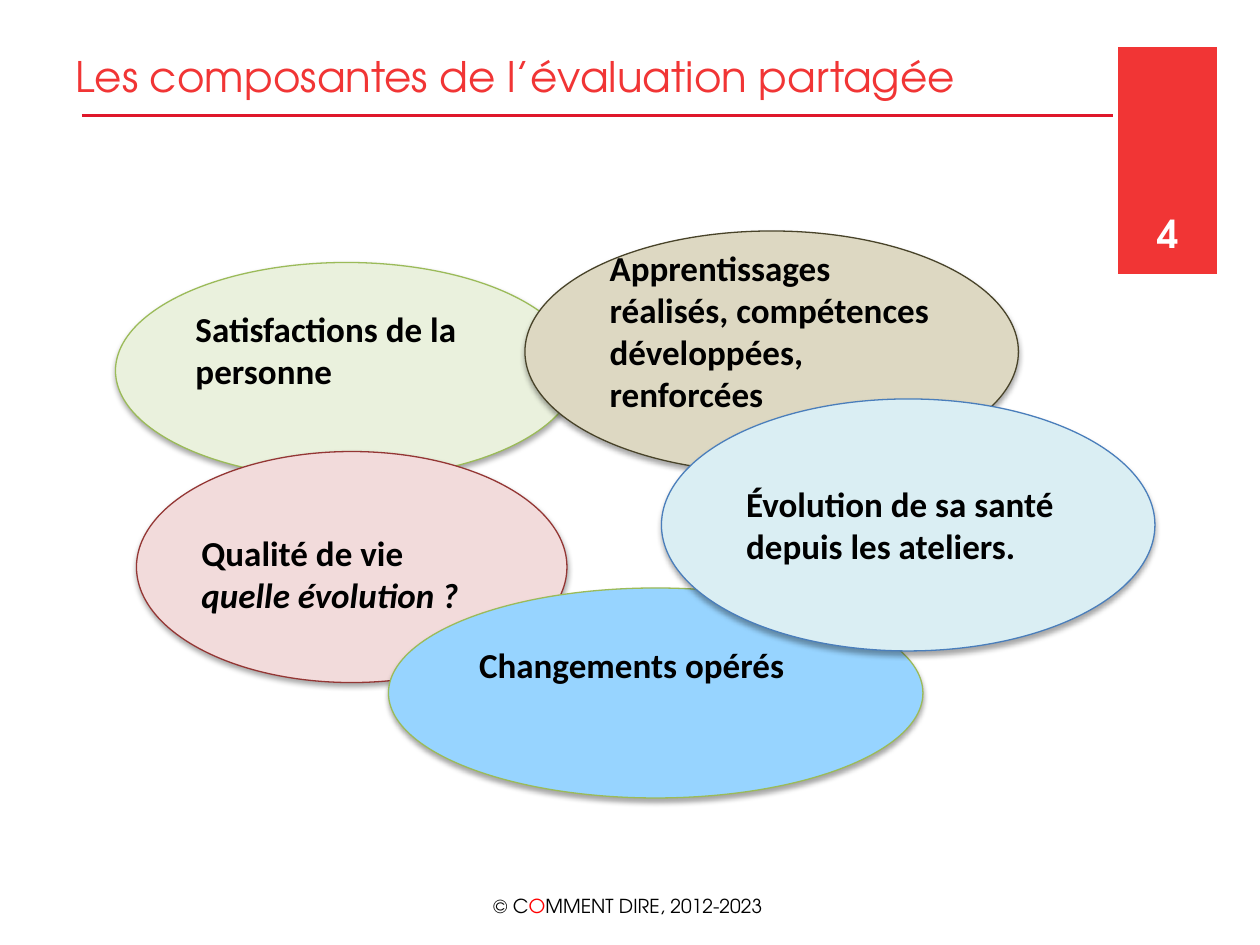
"""Build the slide on the components of a shared evaluation."""
from dataclasses import dataclass

from lxml import etree
from pptx import Presentation
from pptx import util as u
from pptx.dml.color import RGBColor
from pptx.enum import shapes, text
from pptx.oxml import ns

COLUMNS, ROWS = 120, 90
CELL = u.Inches(10) // COLUMNS


@dataclass(frozen=True)
class Theme:
    heading: str = "TeX Gyre Adventor"
    body: str = "Calibri"
    title_size: float = 24
    number_size: float = 22
    body_size: float = 20
    footer_size: float = 11
    accent: str = "F13535"
    rule: str = "DF172A"
    highlight: str = "FF0000"
    ink: str = "000000"
    paper: str = "FFFFFF"


THEME = Theme()


@dataclass(frozen=True)
class Area:
    column: float
    row: float
    columns: float
    rows: float

    def lengths(self) -> list[int]:
        return [grid(value) for value in (self.column, self.row, self.columns, self.rows)]


@dataclass(frozen=True)
class Style:
    font: str = THEME.body
    size: float = THEME.body_size
    bold: bool = True
    align: text.PP_ALIGN = text.PP_ALIGN.LEFT
    anchor: text.MSO_ANCHOR = text.MSO_ANCHOR.MIDDLE


@dataclass(frozen=True)
class Span:
    words: str
    color: str = THEME.ink
    italic: bool = False
    new_line: bool = False


@dataclass(frozen=True)
class Bubble:
    area: Area
    fill: str
    line: str
    spans: tuple[Span, ...] = ()
    lift: float = 0


BUBBLES = (
    Bubble(Area(11, 25, 44, 20.6), "EAF1DD", "9BBB59",
           (Span("Satisfactions de la personne"),), 4),
    Bubble(Area(50, 22, 47, 23), "DDD8C2", "484329",
           (Span("Apprentissages réalisés, compétences développées, renforcées"),), 4),
    Bubble(Area(13, 43, 41, 22), "F2DBDB", "943634"),
    Bubble(Area(37, 56, 50.9, 20), "97D4FF", "9BBB59",
           (Span("Changements opérés"),), 5.4),
    Bubble(Area(63, 38, 47, 24), "DAEEF3", "4A7EBB",
           (Span("Évolution de sa santé"), Span("depuis les ateliers.", new_line=True))),
)
QUALITY = (Span("Qualité de vie"),
           Span("quelle évolution\u00a0?", italic=True, new_line=True))
FOOTER = (Span("© C"), Span("O", THEME.highlight), Span("MMENT DIRE, 2012-2023"))


def grid(cells: float) -> int:
    """Turn grid cells into a length."""
    return round(cells * CELL)


def rgb(color: str) -> RGBColor:
    """Read a colour from its hexadecimal form."""
    return RGBColor.from_string(color)


def write(box, spans: tuple[Span, ...], style: Style) -> None:
    """Fill a shape with one paragraph, run by run."""
    frame = box.text_frame
    frame.word_wrap = True
    frame.vertical_anchor = style.anchor
    para = frame.paragraphs[0]
    para.alignment = style.align
    for span in spans:
        if span.new_line:
            para.add_line_break()
        run = para.add_run()
        run.text = span.words
        font = run.font
        font.name, font.size = style.font, u.Pt(style.size)
        font.bold, font.italic = style.bold, span.italic
        font.color.rgb = rgb(span.color)


def add_label(page, area: Area, spans: tuple[Span, ...], style: Style) -> None:
    """Place a text box on the grid."""
    write(page.shapes.add_textbox(*area.lengths()), spans, style)


def add_shadow(box) -> None:
    """Give a shape a soft shadow straight below it."""
    box.shadow.inherit = False
    effects = box._element.spPr.find(ns.qn("a:effectLst"))
    shadow = etree.SubElement(effects, ns.qn("a:outerShdw"), blurRad=str(u.Pt(3.1)),
                              dist=str(u.Pt(1.8)), dir="5400000", rotWithShape="0")
    color = etree.SubElement(shadow, ns.qn("a:srgbClr"), val=THEME.ink)
    etree.SubElement(color, ns.qn("a:alpha"), val="35000")


def add_bubble(page, bubble: Bubble) -> None:
    """Draw one ellipse, its text lifted by a deeper bottom inset."""
    box = page.shapes.add_shape(shapes.MSO_SHAPE.OVAL, *bubble.area.lengths())
    box.fill.solid()
    box.fill.fore_color.rgb = rgb(bubble.fill)
    box.line.color.rgb = rgb(bubble.line)
    box.line.width = u.Pt(0.75)
    add_shadow(box)
    if bubble.spans:
        box.text_frame.margin_bottom = u.Inches(0.05) + grid(bubble.lift)
        write(box, bubble.spans, Style())


def add_frame(page) -> None:
    """Draw the title rule, the page tab, the title and the page number."""
    rule = page.shapes.add_connector(shapes.MSO_CONNECTOR.STRAIGHT,
                                     grid(7.8), grid(11), grid(106), grid(11))
    rule.line.color.rgb = rgb(THEME.rule)
    rule.line.width = u.Pt(2)
    etree.SubElement(rule._element.spPr, ns.qn("a:effectLst"))
    tab = page.shapes.add_shape(shapes.MSO_SHAPE.RECTANGLE,
                                *Area(106.5, 4.5, 9.4, 21.6).lengths())
    tab.shadow.inherit = False
    tab.fill.solid()
    tab.fill.fore_color.rgb = rgb(THEME.accent)
    tab.line.fill.background()
    add_label(page, Area(6, 0.6, 97, 9.6),
              (Span("Les composantes de l’évaluation partagée", THEME.accent),),
              Style(THEME.heading, THEME.title_size, False, anchor=text.MSO_ANCHOR.BOTTOM))
    add_label(page, Area(108, 19.8, 6.6, 4.8), (Span("4", THEME.paper),),
              Style(THEME.heading, THEME.number_size, align=text.PP_ALIGN.CENTER))


def main() -> None:
    """Build and save the deck."""
    deck = Presentation()
    deck.slide_width, deck.slide_height = grid(COLUMNS), grid(ROWS)
    page = deck.slides.add_slide(deck.slide_layouts[6])
    add_frame(page)
    for bubble in BUBBLES:
        add_bubble(page, bubble)
        if not bubble.spans:
            add_label(page, Area(18, 50, 38, 9.2), QUALITY,
                      Style(anchor=text.MSO_ANCHOR.TOP))
    add_label(page, Area(2.3, 83.9, 115, 4.8), FOOTER,
              Style(THEME.heading, THEME.footer_size, False, text.PP_ALIGN.CENTER))
    deck.save("out.pptx")


if __name__ == "__main__":
    main()
